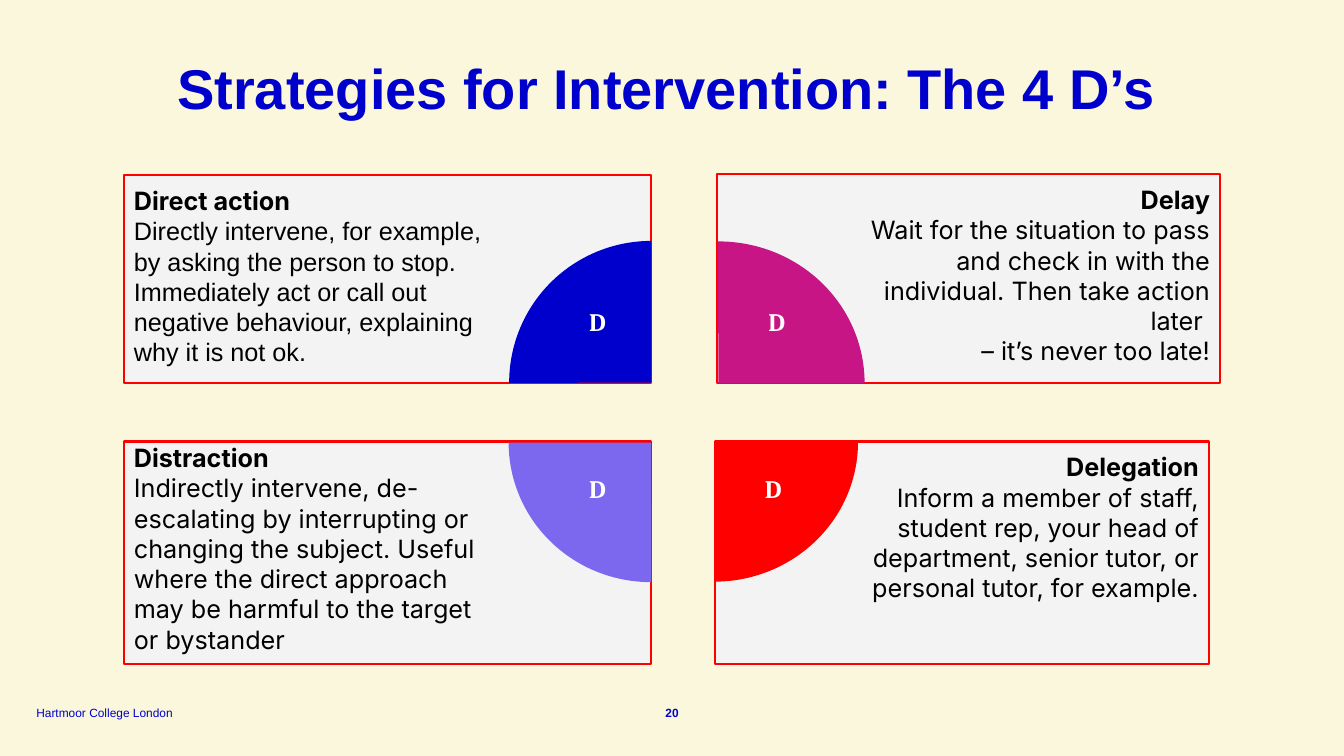
from pptx import Presentation
from pptx.dml.color import RGBColor
from pptx.enum import shapes, text
from pptx.util import Inches, Pt

COLORS = {
    "cream": "FBF7DC", "blue": "0000CD", "red": "FF0000", "pink": "C71585",
    "violet": "7B68EE", "panel": "F3F3F3", "black": "000000", "white": "FFFFFF",
}
LEFT, CENTER, RIGHT = text.PP_ALIGN.LEFT, text.PP_ALIGN.CENTER, text.PP_ALIGN.RIGHT
TOP, BOTTOM = text.MSO_ANCHOR.TOP, text.MSO_ANCHOR.BOTTOM

TITLE = "Strategies for Intervention: The 4 D’s"
FOOTERS = [
    ("Hartmoor College London", (0.36, 6.99, 1.55, 0.15), LEFT, False),
    ("20", (6.49, 6.99, 0.35, 0.15), CENTER, True),
]
STRATEGIES = [
    dict(name="Delay", font="Inter", color="pink", align=RIGHT, anchor=TOP,
         lines=["Wait for the situation to pass and check in with the individual. "
                "Then take action later ", "– it’s never too late!"],
         box=(7.11, 1.73, 4.99, 2.07), pie=(5.72, 2.35, 2.81, 2.9), turn=90,
         letter=(7.34, 2.99, 0.73, 0.51)),
    dict(name="Direct action", font="Arial", color="blue", align=LEFT, anchor=TOP,
         lines=["Directly intervene, for example, by asking the person to stop. "
                "Immediately act or call out negative behaviour, explaining why it is not ok."],
         box=(1.23, 1.74, 5.23, 2.06), pie=(5.05, 2.39, 2.82, 2.81), turn=0,
         letter=(5.57, 2.99, 0.71, 0.51)),
    dict(name="Delegation", font="Inter", color="red", align=RIGHT, anchor=TOP,
         lines=["Inform a member of staff, student rep, your head of department, "
                "senior tutor, or personal tutor, for example."],
         box=(7.09, 4.38, 4.9, 2.21), pie=(5.66, 3, 2.85, 2.77), turn=180,
         letter=(7.31, 4.65, 0.72, 0.5)),
    dict(name="Distraction", font="Inter", color="violet", align=LEFT, anchor=BOTTOM,
         lines=["Indirectly intervene, de-escalating by interrupting or changing the subject. "
                "Useful where the direct approach may be harmful to the target or bystander"],
         box=(1.23, 4.38, 5.23, 2.21), pie=(5.07, 2.98, 2.77, 2.82), turn=270,
         letter=(5.57, 4.65, 0.71, 0.5)),
]


def rgb(name):
    return RGBColor.from_string(COLORS[name])


def write(sp, lines, size, color, align=LEFT, anchor=TOP, insets=(0.1, 0.05, 0.1, 0.05)):
    tf = sp.text_frame
    tf.word_wrap = True
    tf.vertical_anchor = anchor
    tf.margin_left, tf.margin_top, tf.margin_right, tf.margin_bottom = map(Inches, insets)
    tf.text = "\n".join(line for line, font, bold in lines)
    for p, (line, font, bold) in zip(tf.paragraphs, lines):
        p.alignment = align
        f = p.runs[0].font
        f.name, f.size, f.bold = font, Pt(size), bold
        f.color.rgb = rgb(color)


def add_text(s, box, *args, **kwargs):
    write(s.shapes.add_textbox(*map(Inches, box)), *args, **kwargs)


def add_filled(s, kind, box, fill, line=None):
    sp = s.shapes.add_shape(kind, *map(Inches, box))
    sp.shadow.inherit = False
    sp.fill.solid()
    sp.fill.fore_color.rgb = rgb(fill)
    if line:
        sp.line.color.rgb = rgb(line)
        sp.line.width = Pt(1.5)
    else:
        sp.line.fill.background()
    return sp


def add_strategy(s, item):
    panel = add_filled(s, shapes.MSO_SHAPE.RECTANGLE, item["box"], "panel", "red")
    insets = (1.5, 0.1, 0.1, 0.1) if item["align"] == RIGHT else (0.1, 0.1, 1.5, 0.1)
    lines = [(item["name"], "Inter", True)]
    lines += [(line, item["font"], False) for line in item["lines"]]
    write(panel, lines, 18, "black", item["align"], item["anchor"], insets)

    quarter = add_filled(s, shapes.MSO_SHAPE.PIE, item["pie"], item["color"])
    quarter.adjustments[0] = 107.89
    quarter.adjustments[1] = 162
    quarter.rotation = item["turn"]
    add_text(s, item["letter"], [("D", "Cambria", True)], 18, "white", CENTER)


def main():
    prs = Presentation()
    prs.slide_width, prs.slide_height = Inches(13.33), Inches(7.5)
    s = prs.slides.add_slide(prs.slide_layouts[6])
    s.background.fill.solid()
    s.background.fill.fore_color.rgb = rgb("cream")
    for line, box, align, bold in FOOTERS:
        add_text(s, box, [(line, "Arial", bold)], 8.5, "blue", align, BOTTOM, (0, 0, 0, 0))
    add_text(s, (1.66, 0.48, 10.02, 0.77), [(TITLE, "Arial", True)], 40, "blue")
    for item in STRATEGIES:
        add_strategy(s, item)
    prs.save("out.pptx")


if __name__ == "__main__":
    main()
